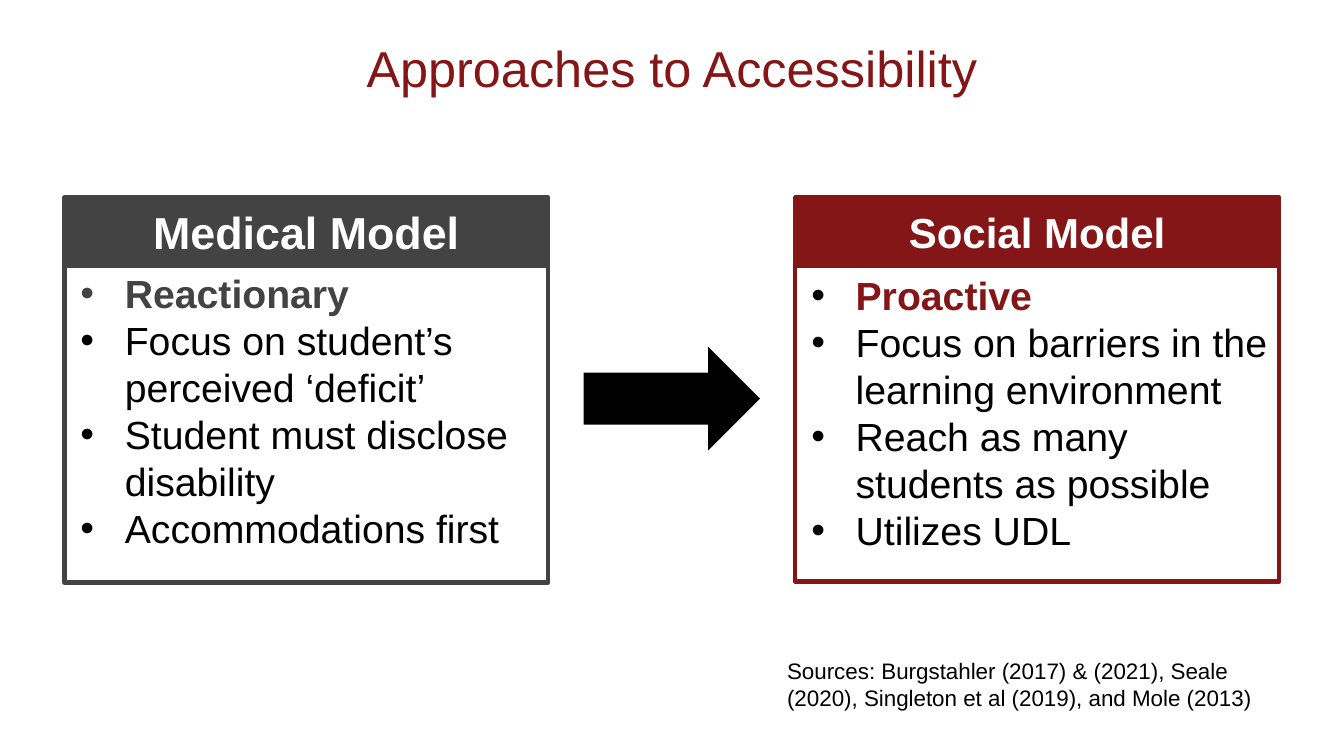
from lxml import etree
from pptx import Presentation
from pptx import util as u
from pptx.dml.color import RGBColor
from pptx.enum import shapes, text
from pptx.oxml.ns import qn

COLORS = {"crimson": "841617", "gray": "434343", "black": "000000", "white": "FFFFFF"}
COLS, ROWS = 160, 90
MODEL_W, MODEL_TOP, HEADER_H = 57.6, 23.52, 8.16
MODELS = [
    {"title": "Social Model", "size": 30, "color": "crimson", "bullet": "black",
     "col": 94.68, "body_top": 31.68, "body_h": 37.56,
     "points": ["Proactive", "Focus on barriers in the learning environment",
                "Reach as many students as possible", "Utilizes UDL"]},
    {"title": "Medical Model", "size": 32, "color": "gray", "bullet": "gray",
     "col": 7.68, "body_top": 31.44, "body_h": 37.92,
     "points": ["Reactionary", "Focus on student’s perceived ‘deficit’",
                "Student must disclose disability", "Accommodations first"]},
]


class Deck:
    """Slide builder working on a grid of 160 columns by 90 rows."""

    def __init__(self):
        self.prs = Presentation()
        self.prs.slide_width, self.prs.slide_height = u.Inches(13.33), u.Inches(7.5)
        self.s = self.prs.slides.add_slide(self.prs.slide_layouts[6])

    def rgb(self, name):
        return RGBColor.from_string(COLORS[name])

    def place(self, col, row, cols, rows):
        w, h = self.prs.slide_width / COLS, self.prs.slide_height / ROWS
        return [round(v) for v in (col * w, row * h, cols * w, rows * h)]

    def frame(self, sp, inset, anchor):
        tf = sp.text_frame
        fmt = {"word_wrap": True, "vertical_anchor": anchor,
               "margin_left": u.Inches(0.1), "margin_right": u.Inches(0.1),
               "margin_top": u.Inches(inset), "margin_bottom": u.Inches(inset)}
        for name, value in fmt.items():
            setattr(tf, name, value)
        return tf

    def add_words(self, p, words, size, color, bold=False, align=text.PP_ALIGN.LEFT):
        p.alignment = align
        r = p.add_run()
        r.text = words
        for name, value in {"name": "Arial", "size": u.Pt(size), "bold": bold}.items():
            setattr(r.font, name, value)
        r.font.color.rgb = self.rgb(color)

    def label(self, box, words, size, color, inset=0.1,
              anchor=text.MSO_ANCHOR.TOP, align=text.PP_ALIGN.LEFT):
        sp = self.s.shapes.add_textbox(*self.place(*box))
        tf = self.frame(sp, inset, anchor)
        self.add_words(tf.paragraphs[0], words, size, color, align=align)

    def shape(self, kind, box, fill, line=None):
        sp = self.s.shapes.add_shape(kind, *self.place(*box))
        sp.shadow.inherit = False
        sp.fill.solid()
        sp.fill.fore_color.rgb = self.rgb(fill)
        if line:
            sp.line.color.rgb = self.rgb(line)
            sp.line.width = u.Pt(3)
        else:
            sp.line.fill.background()
        return sp

    def bullet(self, p, color):
        pPr = p._p.get_or_add_pPr()
        pPr.set("marL", str(u.Inches(0.5)))
        pPr.set("indent", str(u.Inches(-0.44)))
        clr = etree.SubElement(pPr, qn("a:buClr"))
        etree.SubElement(clr, qn("a:srgbClr"), val=COLORS[color])
        etree.SubElement(pPr, qn("a:buFont"), typeface="Arial")
        etree.SubElement(pPr, qn("a:buChar"), char="•")

    def model(self, m):
        rect = shapes.MSO_SHAPE.RECTANGLE
        body = self.shape(rect, (m["col"], m["body_top"], MODEL_W, m["body_h"]), "white", m["color"])
        tf = self.frame(body, 0.05, text.MSO_ANCHOR.TOP)
        for i, point in enumerate(m["points"]):
            p = tf.add_paragraph() if i else tf.paragraphs[0]
            self.bullet(p, "black" if i else m["bullet"])
            self.add_words(p, point, 28, "black" if i else m["color"], bold=not i)
        head = self.shape(rect, (m["col"], MODEL_TOP, MODEL_W, HEADER_H), m["color"], m["color"])
        tf = self.frame(head, 0.1, text.MSO_ANCHOR.MIDDLE)
        self.add_words(tf.paragraphs[0], m["title"], m["size"], "white", True, text.PP_ALIGN.CENTER)


def main():
    deck = Deck()
    deck.label((92.52, 77.04, 58.92, 8.88),
               "Sources: Burgstahler (2017) & (2021), Seale (2020), "
               "Singleton et al (2019), and Mole (2013)", 16, "black")
    for m in MODELS:
        deck.model(m)
    deck.shape(shapes.MSO_SHAPE.RIGHT_ARROW, (69.48, 41.28, 21, 12.36), "black")
    deck.label((8, 3.6, 144, 8.88), "Approaches to Accessibility", 36, "crimson",
               0.05, text.MSO_ANCHOR.MIDDLE, text.PP_ALIGN.CENTER)
    deck.prs.save("out.pptx")


if __name__ == "__main__":
    main()
